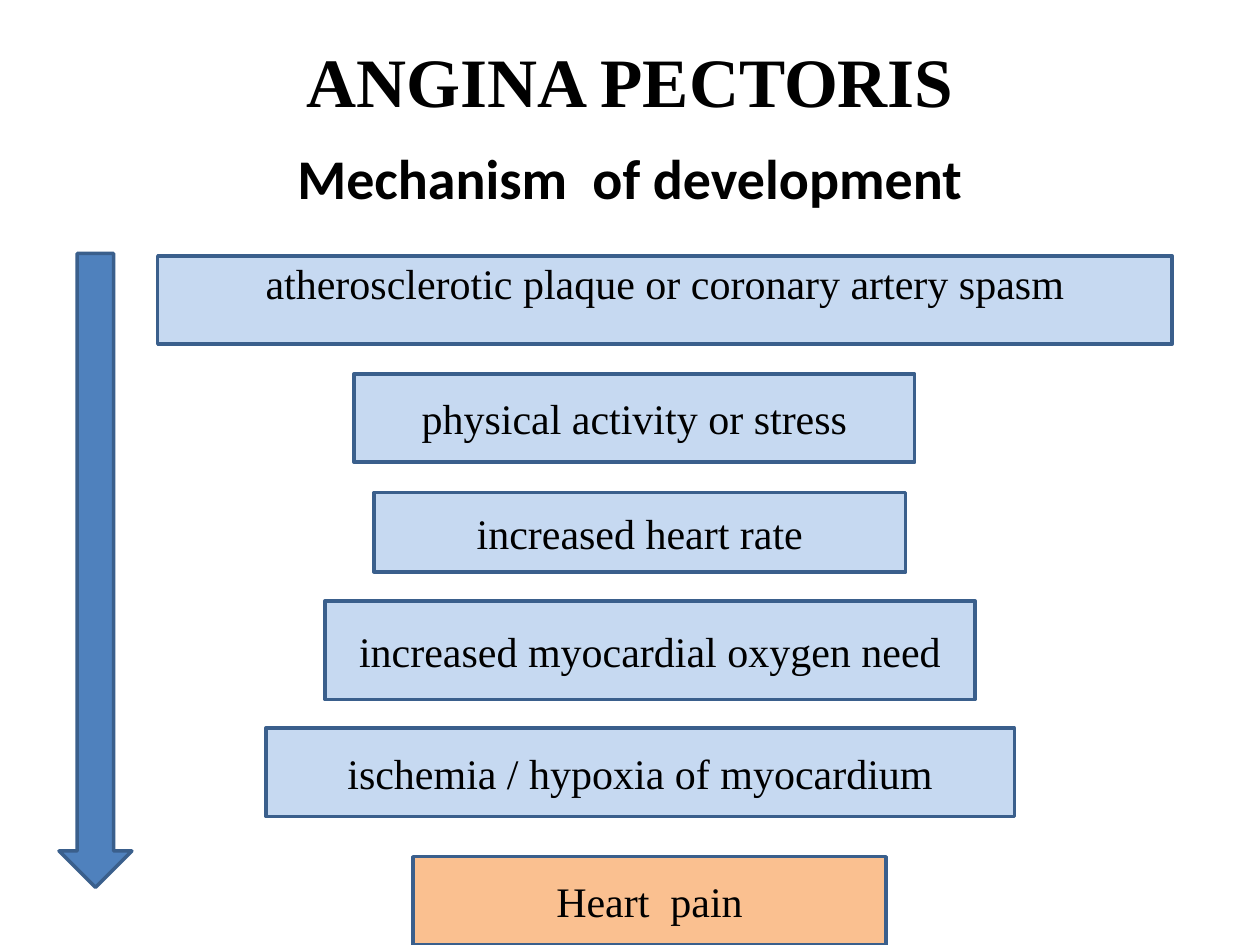
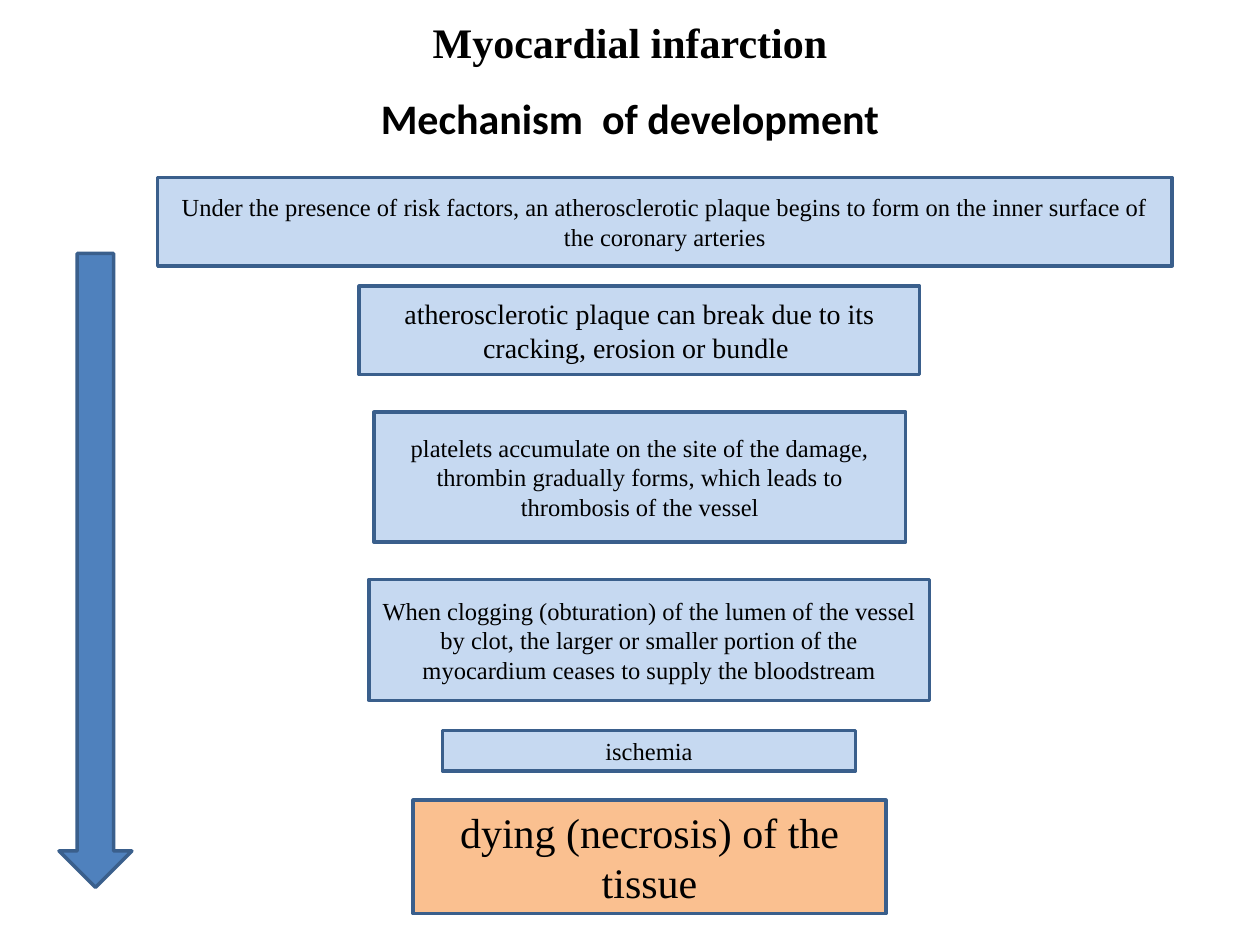
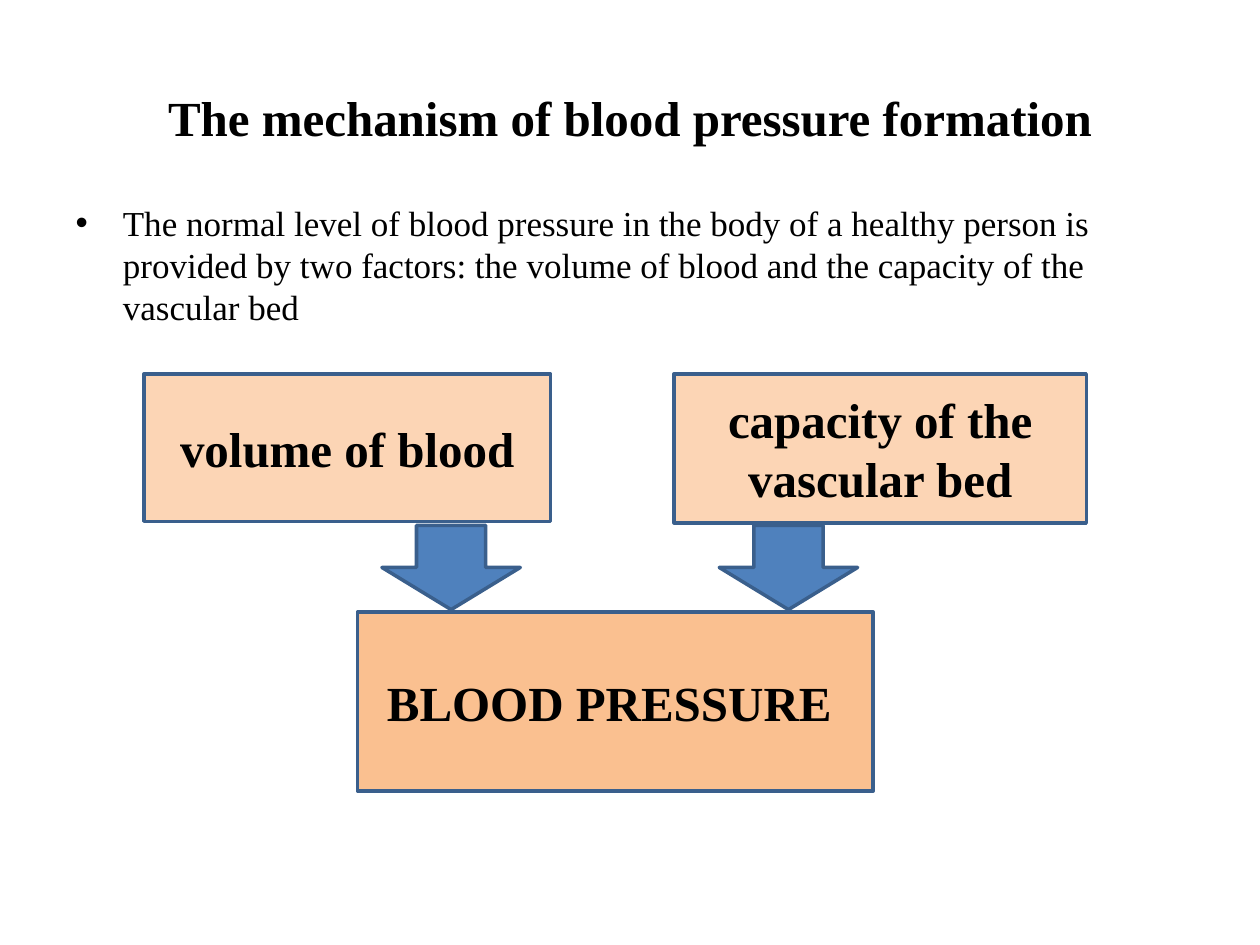
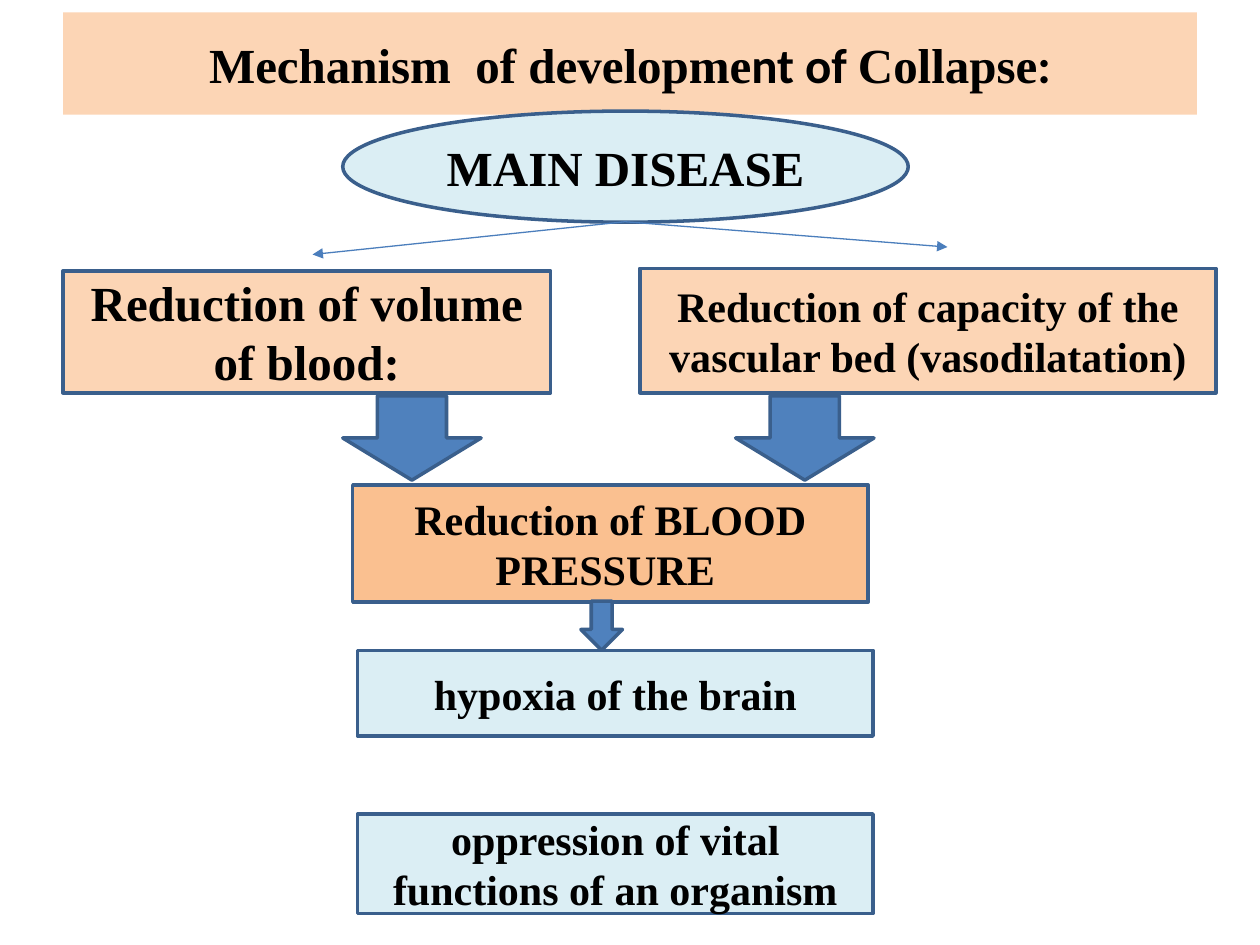
from dataclasses import dataclass
from typing import NamedTuple

import pptx
import pptx.dml.color
import pptx.enum.shapes
import pptx.enum.text
import pptx.oxml.ns
import pptx.util
from lxml import etree

Cm = pptx.util.Cm
Pt = pptx.util.Pt
Anchor = pptx.enum.text.MSO_ANCHOR
Align = pptx.enum.text.PP_ALIGN
Shapes = pptx.enum.shapes.MSO_SHAPE


@dataclass(frozen=True)
class Theme:
    serif: str = "Times New Roman"
    sans: str = "Calibri"
    text: str = "000000"
    outline: str = "3A5F8C"
    connector: str = "4B7EBC"
    arrow: str = "4F81BD"
    blue: str = "C6D9F1"
    pale_blue: str = "DBEEF4"
    peach: str = "FCD5B5"
    orange: str = "FAC090"
    outline_width: float = 2
    connector_width: float = 0.75
    display: float = 39.6
    subtitle: float = 32
    heading: float = 28
    step: float = 24
    body: float = 20
    note: float = 16
    small: float = 14


THEME = Theme()


class Area(NamedTuple):
    """Left, top, width and height in centimetres."""
    left: float
    top: float
    width: float
    height: float


@dataclass(frozen=True)
class Node:
    text: str
    area: Area
    fill: str = THEME.blue
    size: float = THEME.step
    bold: bool = False
    kind: Shapes = Shapes.RECTANGLE
    anchor: Anchor = Anchor.MIDDLE


class TextPart(NamedTuple):
    text: str
    font: str = THEME.serif


# Shared places
TITLE_AREA = Area(1.27, 0.76, 22.86, 3.18)
TIMELINE = Area(1.19, 5.11, 1.47, 12.78)
SUBTITLE = "Mechanism  of development"

# Steps of the two disease mechanisms
ANGINA_STEPS = [
    Node("atherosclerotic plaque or coronary artery spasm",
         Area(3.18, 5.16, 20.45, 1.78), anchor=Anchor.TOP),
    Node("physical activity or stress", Area(7.14, 7.54, 11.3, 1.78)),
    Node("increased heart rate", Area(7.54, 9.93, 10.72, 1.6)),
    Node("increased myocardial oxygen need", Area(6.55, 12.12, 13.11, 1.98)),
    Node("ischemia / hypoxia of myocardium", Area(5.36, 14.68, 15.09, 1.78)),
    Node("Heart  pain", Area(8.33, 17.27, 9.53, 1.78), THEME.orange),
]
INFARCTION_STEPS = [
    Node("Under the presence of risk factors, an atherosclerotic plaque begins to form "
         "on the inner surface of the coronary arteries",
         Area(3.18, 3.58, 20.45, 1.78), size=THEME.small),
    Node("atherosclerotic plaque can break due to its cracking, erosion or bundle ",
         Area(7.24, 5.77, 11.3, 1.78), size=THEME.note),
    Node("platelets accumulate on the site of the damage, thrombin gradually forms, "
         "which leads to thrombosis of the vessel",
         Area(7.54, 8.31, 10.72, 2.62), size=THEME.small),
    Node("When clogging (obturation) of the lumen of the vessel by clot, the larger or "
         "smaller portion of the myocardium ceases to supply the bloodstream",
         Area(7.44, 11.68, 11.3, 2.44), size=THEME.small),
    Node("ischemia", Area(8.92, 14.73, 8.33, 0.81), size=THEME.small),
    Node("dying (necrosis) of the tissue", Area(8.33, 16.13, 9.53, 2.29), THEME.orange),
]

# Blood pressure and its collapse
PRESSURE_NODES = [
    Node("volume of blood", Area(2.9, 7.54, 8.2, 2.97), THEME.peach, THEME.heading, True),
    Node("capacity of the vascular bed", Area(13.59, 7.54, 8.31, 3),
         THEME.peach, THEME.heading, True),
    Node("BLOOD PRESSURE ", Area(7.21, 12.34, 10.39, 3.61),
         THEME.orange, THEME.heading, True),
]
COLLAPSE_NODES = [
    Node("MAIN DISEASE", Area(6.91, 2.24, 11.4, 2.24), THEME.pale_blue,
         THEME.heading, True, Shapes.OVAL),
    Node("Reduction of volume of blood:", Area(1.27, 5.46, 9.83, 2.46),
         THEME.peach, THEME.heading, True),
    Node("Reduction of capacity of the vascular bed (vasodilatation)",
         Area(12.9, 5.41, 11.61, 2.51), THEME.peach, bold=True),
    Node("Reduction of BLOOD PRESSURE ", Area(7.11, 9.78, 10.39, 2.36),
         THEME.orange, bold=True),
    Node("hypoxia of the brain", Area(7.21, 13.11, 10.39, 1.73),
         THEME.pale_blue, bold=True),
    Node("oppression of vital functions of an organism", Area(7.21, 16.41, 10.39, 2.01),
         THEME.pale_blue, bold=True),
]


def rgb(value: str) -> pptx.dml.color.RGBColor:
    return pptx.dml.color.RGBColor.from_string(value)


def format_font(font, size: float, bold: bool = False, name: str = THEME.serif) -> None:
    font.name = name
    font.size = Pt(size)
    font.bold = bold
    font.color.rgb = rgb(THEME.text)


def place(shape, area: Area) -> None:
    shape.left, shape.top, shape.width, shape.height = (Cm(length) for length in area)


def paint(shape, color: str) -> None:
    shape.fill.solid()
    shape.fill.fore_color.rgb = rgb(color)


def add_block(slide, kind: Shapes, area: Area, fill: str):
    shape = slide.shapes.add_shape(kind, *(Cm(length) for length in area))
    shape.shadow.inherit = False
    paint(shape, fill)
    shape.line.color.rgb = rgb(THEME.outline)
    shape.line.width = Pt(THEME.outline_width)
    return shape


def add_node(slide, node: Node) -> None:
    text_frame = add_block(slide, node.kind, node.area, node.fill).text_frame
    text_frame.word_wrap = True
    text_frame.vertical_anchor = node.anchor
    if node.anchor == Anchor.TOP:
        text_frame.margin_top = Cm(0.04)
    text_frame.text = node.text
    paragraph = text_frame.paragraphs[0]
    paragraph.alignment = Align.CENTER
    format_font(paragraph.runs[0].font, node.size, node.bold)


def add_down_arrow(slide, area: Area) -> None:
    add_block(slide, Shapes.DOWN_ARROW, area, THEME.arrow)


def add_arrow_pair(slide, lefts: tuple[float, float], top: float) -> None:
    for left in lefts:
        add_down_arrow(slide, Area(left, top, 2.79, 1.7))


def add_line_arrow(slide, start: tuple[float, float], end: tuple[float, float]) -> None:
    connector = slide.shapes.add_connector(
        pptx.enum.shapes.MSO_CONNECTOR.STRAIGHT, *(Cm(length) for length in start + end))
    connector.line.color.rgb = rgb(THEME.connector)
    connector.line.width = Pt(THEME.connector_width)
    qualified = pptx.oxml.ns.qn
    outline = connector.line._get_or_add_ln()
    etree.SubElement(outline, qualified("a:tailEnd"), type="triangle")
    etree.SubElement(connector._element.spPr, qualified("a:effectLst"))


def set_title(slide, parts: list[TextPart], size: float, area: Area = TITLE_AREA,
              anchor: Anchor = Anchor.MIDDLE):
    title = slide.shapes.title
    place(title, area)
    text_frame = title.text_frame
    text_frame.auto_size = pptx.enum.text.MSO_AUTO_SIZE.NONE
    text_frame.vertical_anchor = anchor
    if anchor == Anchor.TOP:
        text_frame.margin_top = 0
    paragraph = text_frame.paragraphs[0]
    paragraph.alignment = Align.CENTER
    for part in parts:
        run = paragraph.add_run()
        run.text = part.text
        format_font(run.font, size, True, part.font)
    return title


def set_body(slide, text: str, area: Area, size: float, subtitle: bool = False) -> None:
    body = slide.placeholders[1]
    place(body, area)
    text_frame = body.text_frame
    text_frame.auto_size = pptx.enum.text.MSO_AUTO_SIZE.NONE
    text_frame.text = text
    paragraph = text_frame.paragraphs[0]
    paragraph.space_before = Pt(0)
    if subtitle:
        paragraph.alignment = Align.CENTER
        etree.SubElement(paragraph._p.get_or_add_pPr(), pptx.oxml.ns.qn("a:buNone"))
    format_font(paragraph.runs[0].font, size, subtitle,
                THEME.sans if subtitle else THEME.serif)


def add_content_slide(presentation):
    return presentation.slides.add_slide(presentation.slide_layouts[1])


def build_mechanism(presentation, title: str, title_size: float, title_area: Area,
                    subtitle_size: float, subtitle_area: Area, steps: list[Node]) -> None:
    slide = add_content_slide(presentation)
    set_title(slide, [TextPart(title)], title_size, title_area, Anchor.TOP)
    set_body(slide, SUBTITLE, subtitle_area, subtitle_size, subtitle=True)
    for step in steps:
        add_node(slide, step)
    add_down_arrow(slide, TIMELINE)


def build_pressure(presentation) -> None:
    slide = add_content_slide(presentation)
    set_title(slide, [TextPart("The mechanism of blood pressure formation")], THEME.heading)
    set_body(slide, "The normal level of blood pressure in the body of a healthy person is "
             "provided by two factors: the volume of blood and the capacity of the "
             "vascular bed", Area(1.27, 3.94, 22.86, 13.08), THEME.body)
    for node in PRESSURE_NODES:
        add_node(slide, node)
    add_arrow_pair(slide, (7.7, 14.5), 10.59)


def build_collapse(presentation) -> None:
    slide = presentation.slides.add_slide(presentation.slide_layouts[5])
    title = set_title(slide, [
        TextPart("Mechanism  of developme"), TextPart("nt of ", THEME.sans),
        TextPart("Collapse"), TextPart(":", THEME.sans),
    ], THEME.heading, Area(1.27, 0.25, 22.86, 2.06))
    paint(title, THEME.peach)
    for node in COLLAPSE_NODES:
        add_node(slide, node)
    for end in ((6.3, 5.13), (19.1, 4.98)):
        add_line_arrow(slide, (12.6, 4.47), end)
    add_arrow_pair(slide, (6.91, 14.83), 7.98)
    add_down_arrow(slide, Area(11.71, 12.12, 0.84, 0.99))


def main() -> None:
    presentation = pptx.Presentation()
    presentation.slide_width, presentation.slide_height = Cm(25.4), Cm(19.05)
    build_mechanism(presentation, "ANGINA PECTORIS", THEME.display, TITLE_AREA,
                    THEME.subtitle, Area(1.27, 2.77, 22.86, 14.25), ANGINA_STEPS)
    build_mechanism(presentation, "Myocardial infarction", THEME.step,
                    Area(1.27, 0.33, 22.86, 1.85), THEME.step,
                    Area(1.27, 1.73, 22.86, 15.29), INFARCTION_STEPS)
    build_pressure(presentation)
    build_collapse(presentation)
    presentation.save("out.pptx")


if __name__ == "__main__":
    main()
